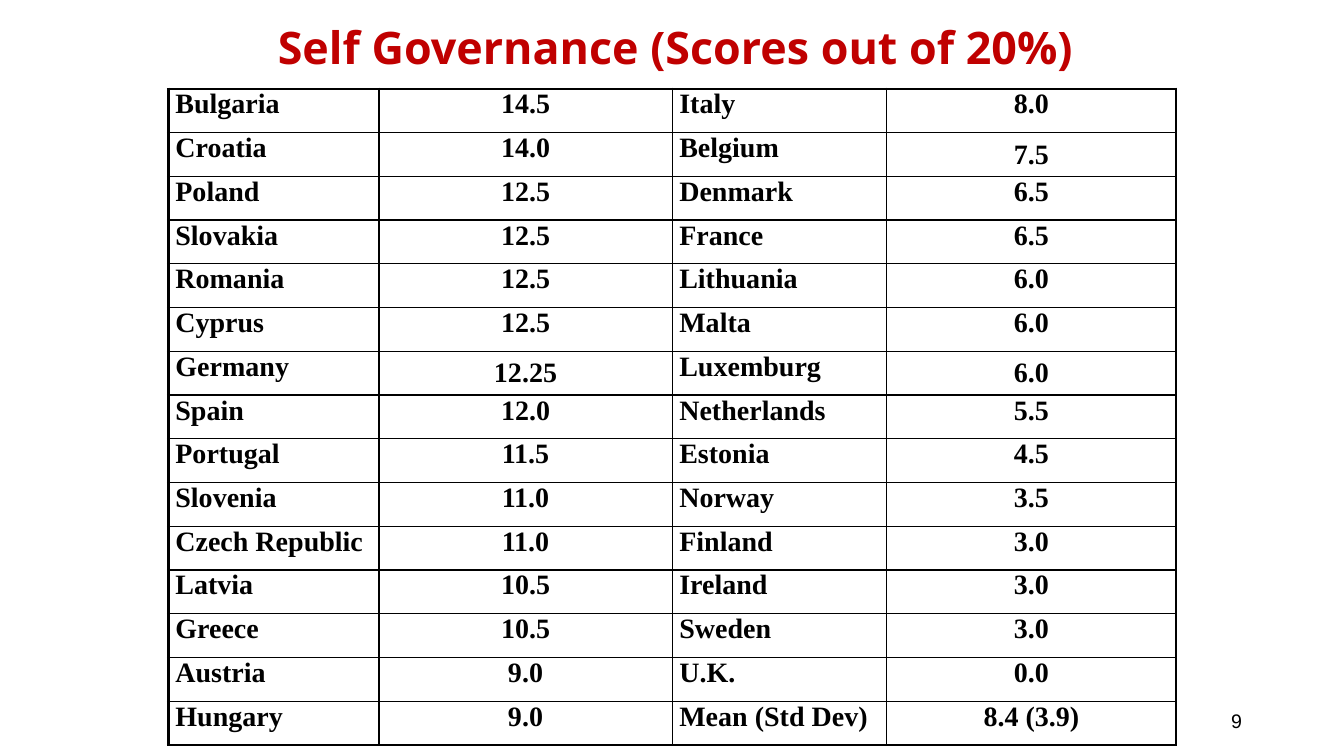
"""Build a slide with a table of self governance scores by country."""
from dataclasses import dataclass

from lxml import etree
from pptx import Presentation
from pptx.dml.color import RGBColor
from pptx.enum.text import MSO_ANCHOR, MSO_AUTO_SIZE, PP_ALIGN
from pptx.oxml.ns import qn
from pptx.util import Cm, Pt

LEFT, CENTER, RIGHT = PP_ALIGN.LEFT, PP_ALIGN.CENTER, PP_ALIGN.RIGHT
TOP, MIDDLE = MSO_ANCHOR.TOP, MSO_ANCHOR.MIDDLE
NO_AUTOSIZE = MSO_AUTO_SIZE.NONE
TITLE_ONLY = 5


@dataclass(frozen=True)
class Theme:
    """Hold the colours, fonts, type sizes and line widths."""
    red: str = "C00000"
    black: str = "000000"
    title_font: str = "Noto Sans"
    table_font: str = "Times New Roman"
    number_font: str = "Arial"
    title_size: int = 32
    table_size: int = 20
    number_size: int = 14
    outer_line: float = 2.25
    inner_line: float = 1


THEME = Theme()

SCORES = [
    ("Bulgaria", "14.5", "Italy", "8.0"),
    ("Croatia", "14.0", "Belgium", "7.5"),
    ("Poland", "12.5", "Denmark", "6.5"),
    ("Slovakia", "12.5", "France", "6.5"),
    ("Romania", "12.5", "Lithuania", "6.0"),
    ("Cyprus", "12.5", "Malta", "6.0"),
    ("Germany", "12.25", "Luxemburg", "6.0"),
    ("Spain", "12.0", "Netherlands", "5.5"),
    ("Portugal", "11.5", "Estonia", "4.5"),
    ("Slovenia", "11.0", "Norway", "3.5"),
    ("Czech Republic", "11.0", "Finland", "3.0"),
    ("Latvia", "10.5", "Ireland", "3.0"),
    ("Greece", "10.5", "Sweden", "3.0"),
    ("Austria", "9.0", "U.K.", "0.0"),
    ("Hungary", "9.0", "Mean (Std Dev)", "8.4 (3.9)"),
]
COLUMN_WIDTHS = (5.31, 7.39, 5.41, 7.29)
MIDDLE_CELLS = {(1, 3), (6, 1), (6, 3)}


def write_text(frame, text, *, font, size, color=THEME.black, bold=False, align=LEFT):
    """Write one formatted paragraph into a text frame."""
    para = frame.paragraphs[0]
    para.alignment = align
    span = para.add_run()
    span.text = text
    span.font.name = font
    span.font.size = Pt(size)
    span.font.bold = bold
    span.font.color.rgb = RGBColor.from_string(color)


def set_border(cell, side, width):
    """Draw a solid black border on one side of a cell."""
    properties = cell._tc.get_or_add_tcPr()
    line = etree.SubElement(properties, qn(f"a:ln{side}"), w=str(Pt(width)))
    fill = etree.SubElement(line, qn("a:solidFill"))
    etree.SubElement(fill, qn("a:srgbClr"), val=THEME.black)


def add_title(page, text):
    """Place and fill the title placeholder."""
    box = page.shapes.title
    box.left, box.top, box.width, box.height = Cm(3.73), Cm(0), Cm(26.59), Cm(2.39)
    frame = box.text_frame
    frame.auto_size = NO_AUTOSIZE
    frame.word_wrap = True
    frame.vertical_anchor = TOP
    frame.margin_left = frame.margin_right = Cm(0.5)
    frame.margin_top = frame.margin_bottom = Cm(0.5)
    write_text(frame, text, font=THEME.title_font, size=THEME.title_size,
               color=THEME.red, bold=True, align=CENTER)


def fill_cell(cell, text, *, align, anchor, borders):
    """Write and format one table cell."""
    cell.margin_left = cell.margin_right = Cm(0.18)
    cell.margin_top = cell.margin_bottom = Cm(0)
    cell.vertical_anchor = anchor
    for side, is_outer in borders.items():
        set_border(cell, side, THEME.outer_line if is_outer else THEME.inner_line)
    cell.fill.background()
    write_text(cell.text_frame, text, font=THEME.table_font,
               size=THEME.table_size, bold=True, align=align)


def add_score_table(page, rows):
    """Add the bordered table of countries and scores."""
    last_row, last_column = len(rows) - 1, len(COLUMN_WIDTHS) - 1
    table = page.shapes.add_table(len(rows), len(COLUMN_WIDTHS), Cm(4.24), Cm(2.24),
                                  Cm(sum(COLUMN_WIDTHS)), Cm(16.54)).table
    table.first_row = table.horz_banding = False
    for column, width in zip(table.columns, COLUMN_WIDTHS):
        column.width = Cm(width)
    for row, texts in enumerate(rows):
        for column, text in enumerate(texts):
            fill_cell(table.cell(row, column), text,
                      align=CENTER if column % 2 else LEFT,
                      anchor=MIDDLE if (row, column) in MIDDLE_CELLS else TOP,
                      borders={"L": column == 0, "R": column == last_column,
                               "T": row == 0, "B": row == last_row})


def add_page_number(page, number):
    """Add the page number at the lower right."""
    box = page.shapes.add_textbox(Cm(23.93), Cm(17.65), Cm(7.62), Cm(1.02))
    frame = box.text_frame
    frame.word_wrap = True
    frame.vertical_anchor = MIDDLE
    write_text(frame, number, font=THEME.number_font, size=THEME.number_size, align=RIGHT)


def main():
    """Build and save the deck."""
    deck = Presentation()
    deck.slide_width, deck.slide_height = Cm(33.87), Cm(19.05)
    page = deck.slides.add_slide(deck.slide_layouts[TITLE_ONLY])
    add_title(page, "Self Governance (Scores out of 20%)")
    add_score_table(page, SCORES)
    add_page_number(page, "9")
    deck.save("out.pptx")


if __name__ == "__main__":
    main()
